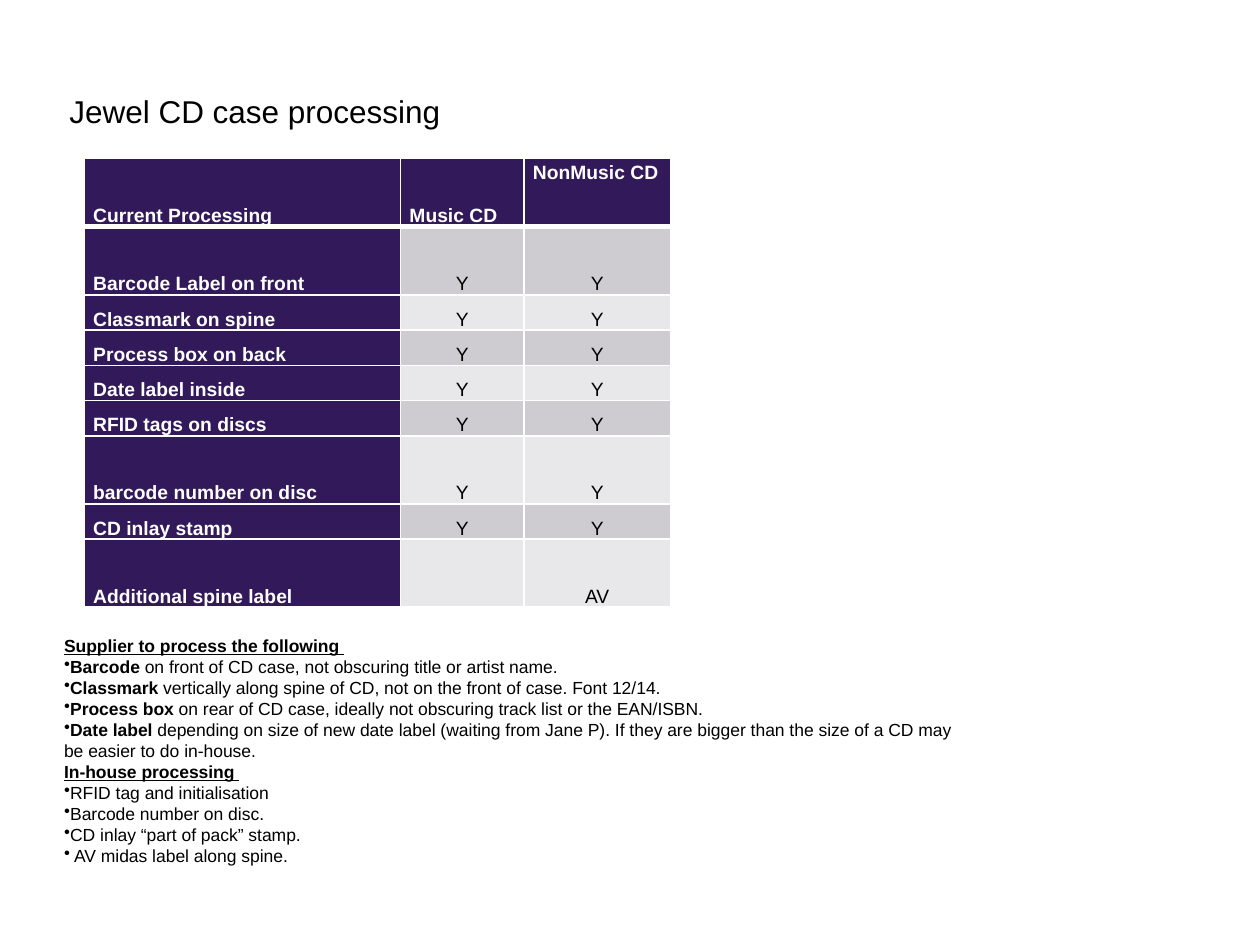
from lxml.etree import SubElement as Sub
from pptx import Presentation
from pptx.dml.color import RGBColor
from pptx.enum.text import MSO_ANCHOR as Anchor, PP_ALIGN as Align, MSO_AUTO_SIZE as Fit
from pptx.oxml.ns import qn
from pptx.util import Inches, Pt

BLACK = RGBColor(0, 0, 0)
WHITE = RGBColor(255, 255, 255)
PURPLE = RGBColor(0x32, 0x19, 0x59)
DARK = RGBColor(0xCE, 0xCC, 0xD1)
LIGHT = RGBColor(0xE8, 0xE8, 0xEA)

HEADS = ["Current Processing", "Music CD", "NonMusic CD"]
TALL, SHORT = 0.54, 0.28
STEPS = [
    ("Barcode Label on front", "Y", "Y", TALL),
    ("Classmark on spine", "Y", "Y", SHORT),
    ("Process box on back", "Y", "Y", SHORT),
    ("Date label inside", "Y", "Y", SHORT),
    ("RFID tags on discs", "Y", "Y", SHORT),
    ("barcode number on disc", "Y", "Y", TALL),
    ("CD inlay stamp", "Y", "Y", SHORT),
    ("Additional spine label", "", "AV", TALL),
]
NOTES = [
    ("Supplier to process the following ", [
        ("Barcode", " on front of CD case, not obscuring title or artist name."),
        ("Classmark", " vertically along spine of CD, not on the front of case. Font 12/14."),
        ("Process box", " on rear of CD case, ideally not obscuring track list or the EAN/ISBN."),
        ("Date label", " depending on size of new date label (waiting from Jane P). "
         "If they are bigger than the size of a CD may be easier to do in-house."),
    ]),
    ("In-house processing ", [
        ("", "RFID tag and initialisation"),
        ("", "Barcode number on disc."),
        ("", "CD inlay “part of pack” stamp."),
        ("", " AV midas label along spine."),
    ]),
]


def style(para, size, color=BLACK, bold=None):
    font = para.font
    font.name, font.size, font.bold = "Arial", Pt(size), bold
    font.color.rgb = color


def add_title(slide, text):
    title = slide.shapes.title
    title.left, title.top = Inches(0.45), Inches(0.68)
    title.width, title.height = Inches(3.18), Inches(0.4)
    frame = title.text_frame
    frame.text = text
    frame.word_wrap = False
    frame.auto_size = Fit.SHAPE_TO_FIT_TEXT
    frame.vertical_anchor = Anchor.TOP
    para = frame.paragraphs[0]
    para.alignment = Align.LEFT
    style(para, 18)


def set_edges(cell, base):
    props = cell._tc.get_or_add_tcPr()
    for side, width in (("L", 1), ("R", 1), ("T", 1), ("B", base)):
        line = Sub(props, qn(f"a:ln{side}"), w=str(Pt(width)))
        Sub(Sub(line, qn("a:solidFill")), qn("a:srgbClr"), val=str(WHITE))


def fill_cell(cell, text, fill, label, base=1):
    set_edges(cell, base)
    cell.fill.solid()
    cell.fill.fore_color.rgb = fill
    cell.margin_left = cell.margin_right = Inches(0.07)
    cell.margin_top = cell.margin_bottom = 0
    cell.vertical_anchor = Anchor.BOTTOM
    cell.text = text
    para = cell.text_frame.paragraphs[0]
    para.line_spacing = 1.15
    para.alignment = Align.LEFT if label else Align.CENTER
    style(para, 11, WHITE if label else BLACK, label)


def add_grid(slide):
    frame = slide.shapes.add_table(len(STEPS) + 1, len(HEADS), Inches(0.67),
                                   Inches(1.26), Inches(4.65), Inches(3.56))
    table = frame.table
    for col, width in zip(table.columns, (2.51, 0.98, 1.16)):
        col.width = Inches(width)
    table.rows[0].height = Inches(TALL)
    for c, head in enumerate(HEADS):
        fill_cell(table.cell(0, c), head, PURPLE, True, 3)
    table.cell(0, 2).vertical_anchor = Anchor.TOP
    for r, (*texts, height) in enumerate(STEPS, 1):
        table.rows[r].height = Inches(height)
        band = DARK if r % 2 else LIGHT
        for c, text in enumerate(texts):
            fill_cell(table.cell(r, c), text, band if c else PURPLE, c == 0)


def add_bullet(para):
    props = para._p.get_or_add_pPr()
    props.set("marL", "0")
    props.set("indent", "0")
    Sub(props, qn("a:buChar"), char="•")


def add_notes(slide):
    box = slide.shapes.add_textbox(Inches(0.41), Inches(4.98), Inches(7.42), Inches(1.95))
    frame = box.text_frame
    frame.word_wrap = True
    frame.auto_size = Fit.SHAPE_TO_FIT_TEXT
    frame.vertical_anchor = Anchor.MIDDLE
    para = frame.paragraphs[0]
    for head, items in NOTES:
        if para.runs:
            para = frame.add_paragraph()
        para.add_run().text = head
        style(para, 10, bold=True)
        para.font.underline = True
        for key, rest in items:
            para = frame.add_paragraph()
            add_bullet(para)
            style(para, 10)
            if key:
                run = para.add_run()
                run.text = key
                run.font.bold = True
            para.add_run().text = rest


def main():
    deck = Presentation()
    deck.slide_width, deck.slide_height = Inches(10), Inches(7.5)
    slide = deck.slides.add_slide(deck.slide_layouts[5])
    add_title(slide, "Jewel CD case processing")
    add_grid(slide)
    add_notes(slide)
    deck.save("out.pptx")


if __name__ == "__main__":
    main()
